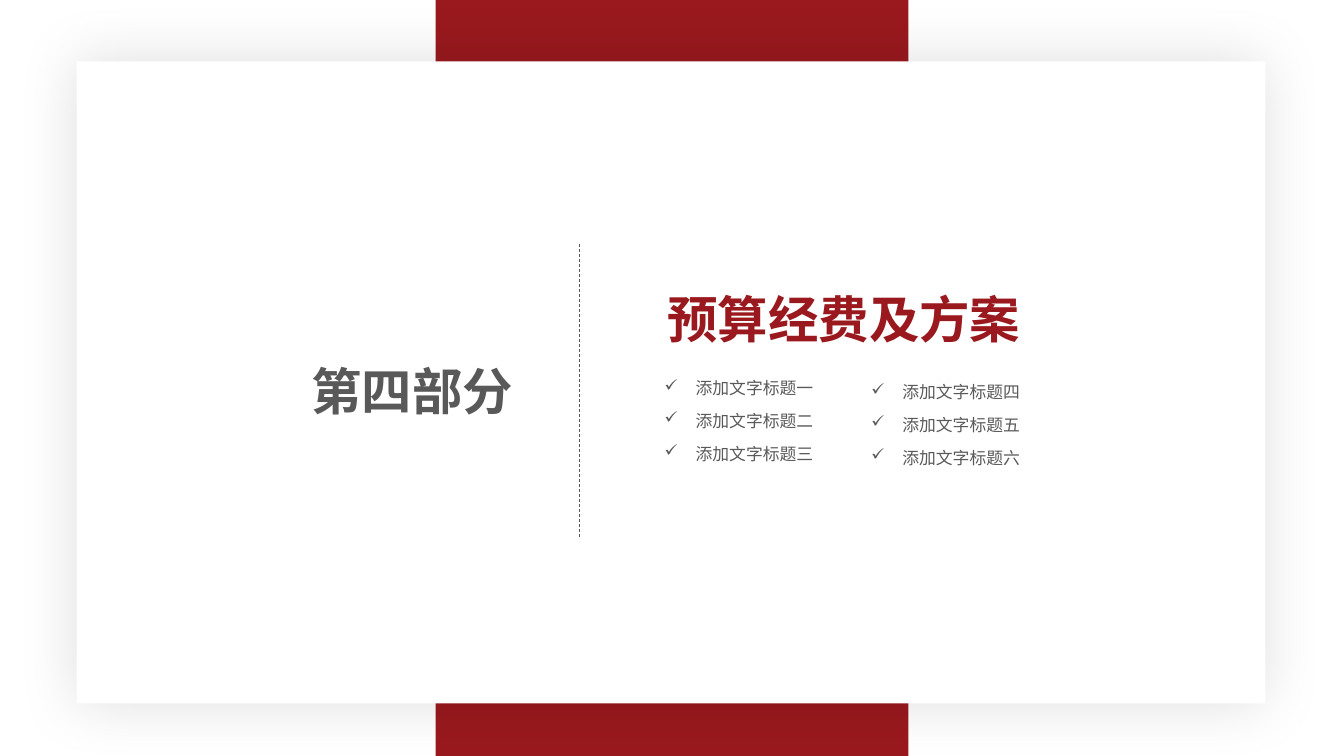
from pptx import Presentation
from pptx.dml.color import RGBColor
from pptx.enum.dml import MSO_LINE
from pptx.enum.shapes import MSO_CONNECTOR, MSO_SHAPE
from pptx.enum.text import MSO_ANCHOR, MSO_AUTO_SIZE, PP_ALIGN
from pptx.oxml import parse_xml
from pptx.oxml.ns import nsdecls
from pptx.util import Inches, Pt

RED, GREY, WHITE = "99191E", "595959", "FFFFFF"
FONT = "Arial Narrow"
LISTS = [
    ["添加文字标题一", "添加文字标题二", "添加文字标题三"],
    ["添加文字标题四", "添加文字标题五", "添加文字标题六"],
]


def color(target, code):
    target.rgb = RGBColor.from_string(code)


def place(shape, left, top, width, height):
    shape.left, shape.top = Inches(left), Inches(top)
    shape.width, shape.height = Inches(width), Inches(height)


def style(par, size, code, bold=False):
    for run in par.runs:
        run.font.name, run.font.size, run.font.bold = FONT, Pt(size), bold
        color(run.font.color, code)


def block(slide, box, code):
    rect = slide.shapes.add_shape(MSO_SHAPE.RECTANGLE, *map(Inches, box))
    rect.shadow.inherit = False
    rect.fill.solid()
    color(rect.fill.fore_color, code)
    rect.line.fill.background()
    return rect


def frame(shape, wrap, side=0.1, edge=0.05):
    text = shape.text_frame
    text.word_wrap = wrap
    text.auto_size = MSO_AUTO_SIZE.NONE
    text.vertical_anchor = MSO_ANCHOR.TOP
    text.margin_left = text.margin_right = Inches(side)
    text.margin_top = text.margin_bottom = Inches(edge)
    return text


def heading(shape, box, words, code, align, wrap):
    place(shape, *box)
    text = frame(shape, wrap)
    text.text = words
    par = text.paragraphs[0]
    par.alignment = align
    style(par, 36, code, True)


def ticks(shape, box, items):
    place(shape, *box)
    text = frame(shape, True, 0.07, 0.04)
    text.text = "\n".join(items)
    for par in text.paragraphs:
        par.line_spacing = 1.0
        par.space_before, par.space_after = Pt(0), Pt(9)
        props = par._p.get_or_add_pPr()
        props.set("marL", str(Inches(0.31)))
        props.set("indent", str(Inches(-0.31)))
        props.append(parse_xml(f'<a:buFont {nsdecls("a")} typeface="Wingdings"/>'))
        props.append(parse_xml(f'<a:buChar {nsdecls("a")} char="ü"/>'))
        style(par, 12, GREY)


def backdrop(slide, width, height):
    # Red band behind the white panel
    band = 4.69
    block(slide, ((width - band) / 2, 0, band, height), RED)
    # White panel with a soft shadow
    panel = block(slide, (0.76, 0.61, 11.79, 6.37), WHITE)
    props = panel._element.spPr
    props.remove(props.find("{*}effectLst"))
    props.append(parse_xml(
        f'<a:effectLst {nsdecls("a")}><a:outerShdw blurRad="{Pt(44)}" dist="0" '
        'algn="ctr" rotWithShape="0"><a:srgbClr val="000000">'
        '<a:alpha val="12000"/></a:srgbClr></a:outerShdw></a:effectLst>'))


def divider(slide, left, top, height):
    ends = map(Inches, (left, top, left, top + height))
    line = slide.shapes.add_connector(MSO_CONNECTOR.STRAIGHT, *ends)
    color(line.line.color, GREY)
    line.line.width = Pt(0.5)
    line.line.dash_style = MSO_LINE.DASH
    line._element.spPr.append(parse_xml(f'<a:effectLst {nsdecls("a")}/>'))


def section(slide, left, top):
    # Part number and dashed divider
    part = slide.shapes.add_textbox(0, 0, 0, 0)
    heading(part, (left, top + 1.1, 5.04, 0.71), "第四部分", GREY,
            PP_ALIGN.CENTER, True)
    divider(slide, left + 4.18, top, 2.92)
    # Section title and its two lists
    title, *bodies = slide.placeholders
    heading(title, (left + 4.95, top + 0.39, 3.74, 0.71), "预算经费及方案", RED,
            PP_ALIGN.LEFT, False)
    for col, (body, items) in enumerate(zip(bodies, LISTS)):
        box = (left + 4.95 + 2.05 * col, top + 1.29 + 0.04 * col, 1.65, 1.02)
        ticks(body, box, items)


def main():
    deck = Presentation()
    deck.slide_width, deck.slide_height = Inches(13.33), Inches(7.5)
    slide = deck.slides.add_slide(deck.slide_layouts[3])
    backdrop(slide, 13.33, 7.5)
    # Placeholders go in front of the backdrop
    tree = slide.shapes._spTree
    for holder in list(slide.placeholders):
        tree.append(holder._element)
    section(slide, 1.57, 2.42)
    deck.save("out.pptx")


if __name__ == "__main__":
    main()
